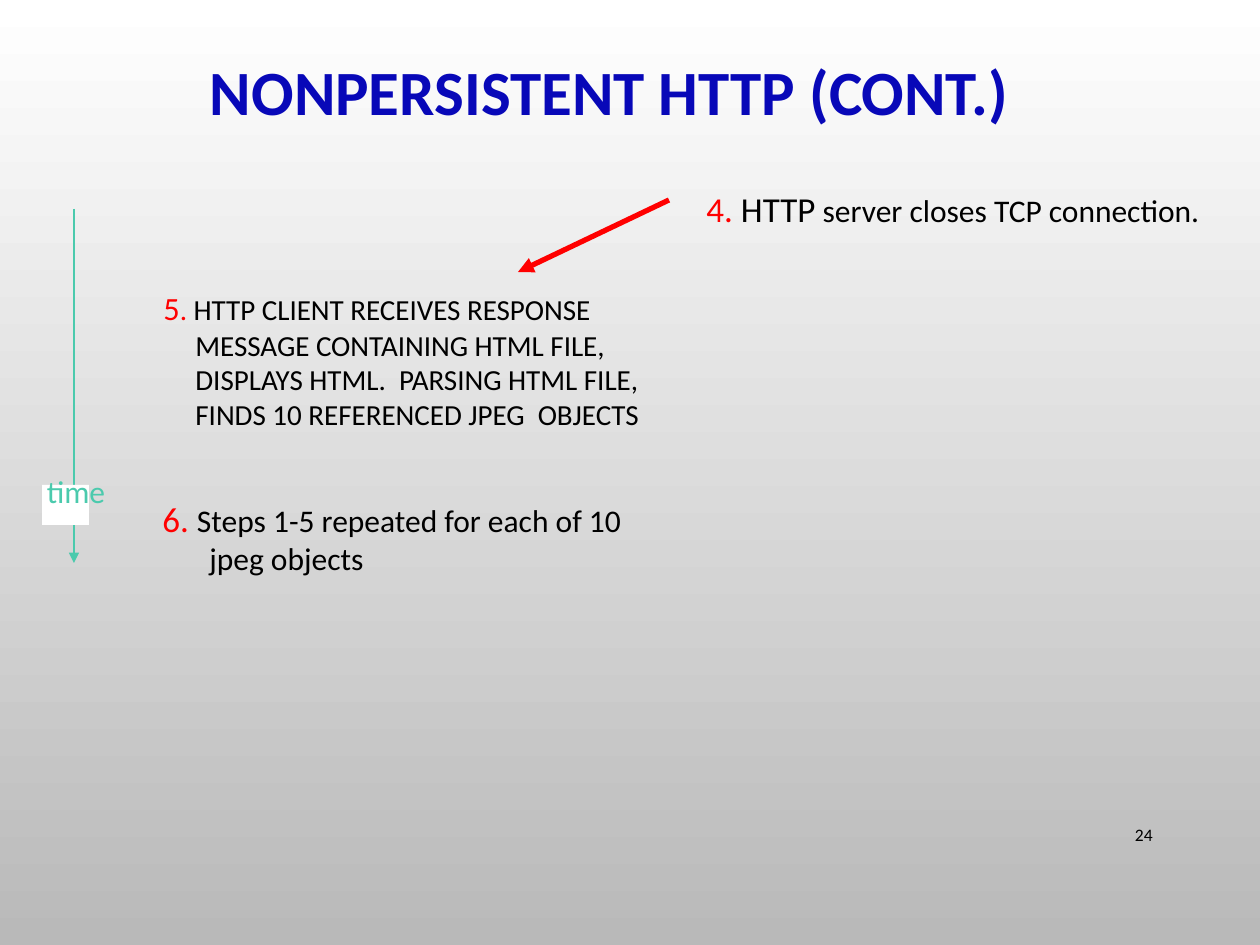
import pptx
import pptx.util
from lxml import etree
from pptx.dml.color import RGBColor
from pptx.enum.shapes import MSO_CONNECTOR, MSO_SHAPE
from pptx.enum.text import MSO_ANCHOR, PP_ALIGN
from pptx.oxml.ns import qn

EMU_PER_PX = 914400 / 126
FONT = "Calibri"
WHITE = RGBColor(0xFF, 0xFF, 0xFF)
GREY = RGBColor(0xB9, 0xB9, 0xB9)
BLACK = RGBColor(0, 0, 0)
BLUE = RGBColor(0x08, 0x08, 0xB8)
RED = RGBColor(0xFF, 0, 0)
TEAL = RGBColor(0x4B, 0xCA, 0xAD)


def px(length):
    """Turn a length in px into EMU."""
    return pptx.util.Emu(round(length * EMU_PER_PX))


def set_background(page):
    """Shade the page from white at the top to grey at the bottom."""
    fill = page.background.fill
    fill.gradient()
    fill.gradient_angle = 270
    for stop, position, color in zip(fill.gradient_stops, (0, 1), (WHITE, GREY)):
        stop.position = position
        stop.color.rgb = color


def add_text(page, place, spans, align=PP_ALIGN.LEFT, anchor=MSO_ANCHOR.TOP,
             hanging=0, wrap=True, bold=False, line_spacing=1.0):
    """Add a one-paragraph text box from (text, size, color) spans."""
    box = page.shapes.add_textbox(*map(px, place))
    frame = box.text_frame
    frame.word_wrap = wrap
    frame.vertical_anchor = anchor
    para = frame.paragraphs[0]
    para.alignment = align
    para.line_spacing = line_spacing
    if hanging:
        properties = para._p.get_or_add_pPr()
        properties.set("marL", str(px(hanging)))
        properties.set("indent", str(-px(hanging)))
    para.font.name = FONT
    para.font.bold = bold
    for text, size, color in spans:
        span = para.add_run()
        span.text = text
        span.font.size = pptx.util.Pt(size)
        span.font.color.rgb = color


def add_arrow(page, start, end, color, width):
    """Add a straight arrow with a triangle head at its end."""
    arrow = page.shapes.add_connector(
        MSO_CONNECTOR.STRAIGHT, *map(px, (*start, *end)))
    arrow.line.color.rgb = color
    arrow.line.width = pptx.util.Pt(width)
    etree.SubElement(arrow.line._get_or_add_ln(), qn("a:tailEnd"), type="triangle")
    etree.SubElement(arrow._element.spPr, qn("a:effectLst"))


def add_patch(page, place, color):
    """Add a plain filled rectangle."""
    patch = page.shapes.add_shape(MSO_SHAPE.RECTANGLE, *map(px, place))
    patch.shadow.inherit = False
    patch.fill.solid()
    patch.fill.fore_color.rgb = color
    patch.line.fill.background()


def main():
    """Build the slide and save it."""
    deck = pptx.Presentation()
    deck.slide_width, deck.slide_height = px(1260), px(945)
    page = deck.slides.add_slide(deck.slide_layouts[6])
    set_background(page)
    add_text(page, (74, 35, 1071, 120), [("NONPERSISTENT HTTP (CONT.)", 36, BLUE)],
             align=PP_ALIGN.CENTER, anchor=MSO_ANCHOR.MIDDLE, bold=True,
             line_spacing=0.9)
    add_text(page, (151, 282, 525, 212), [
        ("5", 18.5, RED),
        (".", 16.6, RED),
        (" HTTP CLIENT RECEIVES RESPONSE MESSAGE CONTAINING HTML FILE, "
         "DISPLAYS HTML.  PARSING HTML FILE, FINDS 10 REFERENCED JPEG  OBJECTS",
         16.6, BLACK)], hanging=32)
    add_text(page, (1086, 810, 79, 50), [("24", 10, BLACK)],
             align=PP_ALIGN.RIGHT, anchor=MSO_ANCHOR.MIDDLE)
    add_text(page, (150, 491, 525, 92), [
        ("6. ", 20, RED),
        ("Steps 1-5 repeated for each of 10 jpeg objects", 18, BLACK)], hanging=47)
    add_text(page, (694, 181, 525, 101), [
        ("4.", 20, RED),
        (" HTTP", 20, BLACK),
        (" server closes TCP connection.", 18, BLACK)], hanging=47)
    add_arrow(page, (74, 209), (74, 563), TEAL, 1.5)
    add_patch(page, (42, 485, 47, 40), WHITE)
    add_text(page, (20, 466, 112, 63), [("time", 18, TEAL)],
             align=PP_ALIGN.CENTER, wrap=False)
    add_arrow(page, (669, 200), (518, 272), RED, 3)
    deck.save("out.pptx")


if __name__ == "__main__":
    main()
